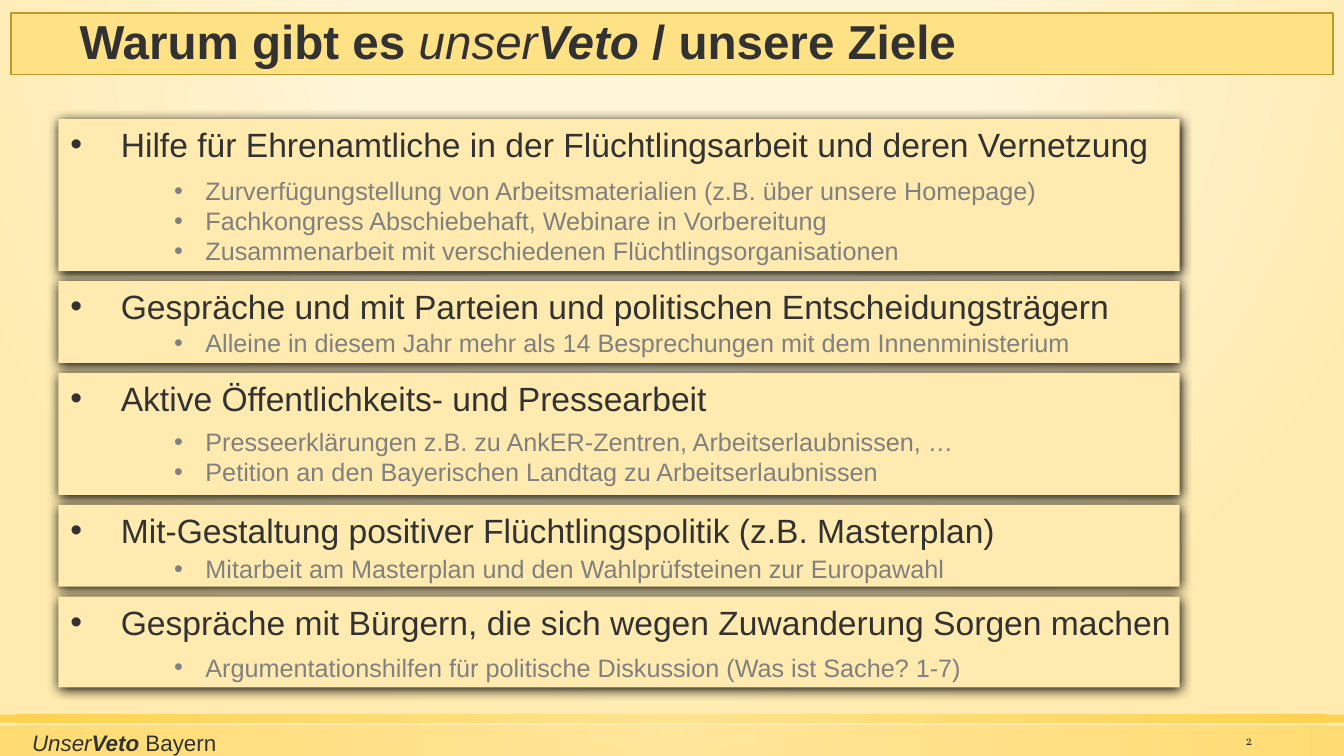
from lxml import etree
from pptx import Presentation
from pptx.dml.color import RGBColor
from pptx.enum.shapes import MSO_SHAPE
from pptx.enum.text import MSO_ANCHOR, MSO_AUTO_SIZE, PP_ALIGN
from pptx.oxml.ns import qn
from pptx.util import Inches, Pt

RECTANGLE = MSO_SHAPE.RECTANGLE
TOP, MIDDLE = MSO_ANCHOR.TOP, MSO_ANCHOR.MIDDLE
LEFT, RIGHT = PP_ALIGN.LEFT, PP_ALIGN.RIGHT

# Spans are (text, bold, italic)
TITLE = [("Warum gibt es ", True, False), ("unser", False, True),
         ("Veto ", True, True), ("/ unsere Ziele", True, False)]
FOOTER = [("Unser", False, True), ("Veto", True, True), (" Bayern", False, False)]
PAGE_NUMBER = "2"

# Goals are (heading, card height, offset of the details, details)
GOALS = [
    ("Hilfe für Ehrenamtliche in der Flüchtlingsarbeit und deren Vernetzung", 1.51, 0.51,
     ["Zurverfügungstellung von Arbeitsmaterialien (z.B. über unsere Homepage)",
      "Fachkongress Abschiebehaft, Webinare in Vorbereitung",
      "Zusammenarbeit mit verschiedenen Flüchtlingsorganisationen"]),
    ("Gespräche und mit Parteien und politischen Entscheidungsträgern", 0.81, 0.41,
     ["Alleine in diesem Jahr mehr als 14 Besprechungen mit dem Innenministerium"]),
    ("Aktive Öffentlichkeits- und Pressearbeit", 1.21, 0.48,
     ["Presseerklärungen z.B. zu AnkER-Zentren, Arbeitserlaubnissen, …",
      "Petition an den Bayerischen Landtag zu Arbeitserlaubnissen"]),
    ("Mit-Gestaltung positiver Flüchtlingspolitik (z.B. Masterplan)", 0.81, 0.43,
     ["Mitarbeit am Masterplan und den Wahlprüfsteinen zur Europawahl"]),
    ("Gespräche mit Bürgern, die sich wegen Zuwanderung Sorgen machen", 0.9, 0.5,
     ["Argumentationshilfen für politische Diskussion (Was ist Sache? 1-7)"]),
]

WIDTH, HEIGHT = 13.33, 7.5
CARD_LEFT, CARD_WIDTH, CARD_TOP, CARD_GAP = 0.58, 11.12, 1.18, 0.1
HEADING_LEFT, HEADING_WIDTH = 0.6, 11.26
DETAIL_LEFT, DETAIL_WIDTH = 1.63, 9.17
DARK, GREY, CREAM, YELLOW, GOLD = "323232", "808080", "FFEBAF", "FFE186", "FFCD36"
PALE, OCHRE = "FFF5D7", "BD9828"


def color(value):
    return RGBColor.from_string(value)


def radial(element, stops, focus):
    """Turn a gradFill into a circular one; stops are (position, colour, opacity)."""
    element.clear()
    stop_list = etree.SubElement(element, qn("a:gsLst"))
    for position, value, opacity in stops:
        stop = etree.SubElement(stop_list, qn("a:gs"), pos=str(position * 1000))
        tone = etree.SubElement(stop, qn("a:srgbClr"), val=value)
        if opacity < 100:
            etree.SubElement(tone, qn("a:alpha"), val=str(opacity * 1000))
    circle = etree.SubElement(element, qn("a:path"))
    circle.set("path", "circle")
    sides = {side: str(share * 1000) for side, share in zip("ltrb", focus)}
    etree.SubElement(circle, qn("a:fillToRect"), **sides)


def add_bar(page, place, fill=None, line=None):
    bar = page.shapes.add_shape(RECTANGLE, *map(Inches, place))
    bar.shadow.inherit = False
    if fill:
        bar.fill.solid()
        bar.fill.fore_color.rgb = color(fill)
    if line:
        bar.line.color.rgb = color(line)
        bar.line.width = Pt(1)
    else:
        bar.line.fill.background()
    return bar


def add_footer_bar(page, top, height, opacity):
    bar = add_bar(page, (0, top, WIDTH, height))
    bar.fill.gradient()
    radial(bar.element.spPr.find(qn("a:gradFill")),
           [(0, YELLOW, opacity), (100, GOLD, opacity)], (50, 50, 50, 50))


def add_card(page, place):
    card = add_bar(page, place, CREAM)
    effects = card.element.spPr.find(qn("a:effectLst"))
    shadow = etree.SubElement(effects, qn("a:outerShdw"), blurRad=str(Pt(8.5)),
                              dist=str(Pt(1)), dir="5400000", algn="t", rotWithShape="0")
    etree.SubElement(shadow, qn("a:srgbClr"), val="000000")


def set_spans(para, spans, size, tone=DARK, font="Arial"):
    for text, bold, italic in spans:
        span = para.add_run()
        span.text = text
        span.font.name, span.font.size = font, Pt(size)
        span.font.bold, span.font.italic = bold, italic
        span.font.color.rgb = color(tone)


def add_box(page, place, anchor=TOP):
    box = page.shapes.add_textbox(*map(Inches, place))
    box.text_frame.word_wrap = True
    box.text_frame.vertical_anchor = anchor
    return box.text_frame


def add_bullets(page, place, lines, size, tone, indent):
    frame = add_box(page, place)
    for index, line in enumerate(lines):
        para = frame.add_paragraph() if index else frame.paragraphs[0]
        properties = para._p.get_or_add_pPr()
        properties.set("marL", str(Inches(indent)))
        properties.set("indent", str(-Inches(indent)))
        etree.SubElement(properties, qn("a:buFont"), typeface="Arial")
        etree.SubElement(properties, qn("a:buChar"), char="•")
        set_spans(para, [(line, False, False)], size, tone)


def add_title(page):
    title = page.shapes.title
    title.left, title.top, title.width, title.height = map(Inches, (0.69, 0.13, 12.25, 0.81))
    title.element.getparent().append(title.element)  # in front of the header bar
    frame = title.text_frame
    frame.auto_size = MSO_AUTO_SIZE.NONE
    frame.word_wrap = True
    frame.vertical_anchor = TOP
    para = frame.paragraphs[0]
    para.alignment, para.line_spacing = LEFT, 0.9
    set_spans(para, TITLE, 34)


def add_goals(page):
    top = CARD_TOP
    for heading, height, offset, details in GOALS:
        add_card(page, (CARD_LEFT, top, CARD_WIDTH, height))
        add_bullets(page, (HEADING_LEFT, top, HEADING_WIDTH, 0.5), [heading], 24, DARK, 0.5)
        add_bullets(page, (DETAIL_LEFT, top + offset, DETAIL_WIDTH, 0.1 + 0.3 * len(details)),
                    details, 18, GREY, 0.31)
        top += height + CARD_GAP


def main():
    deck = Presentation()
    deck.slide_width, deck.slide_height = Inches(WIDTH), Inches(HEIGHT)
    page = deck.slides.add_slide(deck.slide_layouts.get_by_name("Title Only"))
    page.background.fill.gradient()
    radial(next(page.element.iter(qn("a:gradFill"))),
           [(0, PALE, 59), (40, PALE, 66), (100, CREAM, 100)], (50, -80, 50, 180))

    add_footer_bar(page, 7.2, 0.3, 50)
    add_footer_bar(page, 7.09, 0.08, 80)
    add_bar(page, (0.11, 0.13, 13.11, 0.61), YELLOW, OCHRE)
    add_title(page)
    add_goals(page)

    set_spans(add_box(page, (0.22, 7.18, 7.83, 0.26)).paragraphs[0], FOOTER, 16)
    number = add_box(page, (11.82, 7.22, 0.7, 0.26), MIDDLE).paragraphs[0]
    number.alignment = RIGHT
    set_spans(number, [(PAGE_NUMBER, False, False)], 9, font="Vollkorn")
    deck.save("out.pptx")


if __name__ == "__main__":
    main()
